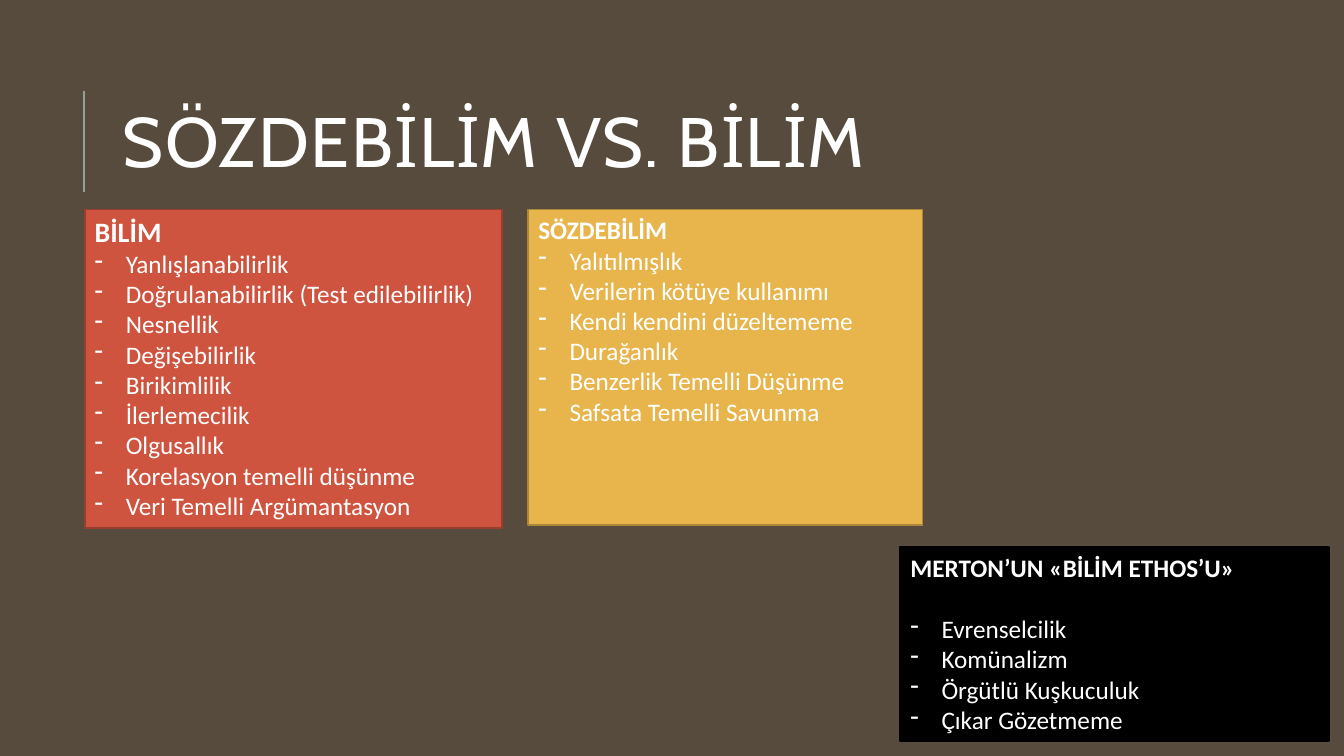
from lxml import etree
from pptx import Presentation, util as u
from pptx.dml.color import RGBColor
from pptx.enum import shapes, text
from pptx.oxml.ns import qn

BROWN = RGBColor(0x56, 0x4B, 0x3C)
SAGE = RGBColor(0x93, 0xA2, 0x99)
WHITE = RGBColor(0xFF, 0xFF, 0xFF)
BLACK = RGBColor(0x00, 0x00, 0x00)
RED = RGBColor(0xCF, 0x54, 0x3F)
RUST = RGBColor(0x99, 0x3E, 0x2F)
GOLD = RGBColor(0xE8, 0xB5, 0x4D)
OCHRE = RGBColor(0xAC, 0x86, 0x39)

SCIENCE = [
    "Yanlışlanabilirlik", "Doğrulanabilirlik (Test edilebilirlik)", "Nesnellik",
    "Değişebilirlik", "Birikimlilik", "İlerlemecilik", "Olgusallık",
    "Korelasyon temelli düşünme", "Veri Temelli Argümantasyon",
]
PSEUDO = [
    "Yalıtılmışlık", "Verilerin kötüye kullanımı", "Kendi kendini düzeltememe",
    "Durağanlık", "Benzerlik Temelli Düşünme", "Safsata Temelli Savunma",
]
ETHOS = ["Evrenselcilik", "Komünalizm", "Örgütlü Kuşkuculuk", "Çıkar Gözetmeme"]


class Board:
    title_font = "Cabin"
    body_font = "Calibri"
    size = 18
    indent = u.Inches(0.31)

    def __init__(self, deck):
        self.slide = deck.slides.add_slide(deck.slide_layouts[6])
        fill = self.slide.background.fill
        fill.solid()
        fill.fore_color.rgb = BROWN

    def style(self, para, words, size, name, bold=False):
        para.text = words
        font = para.font
        font.size, font.name, font.bold = u.Pt(size), name, bold
        font.color.rgb = WHITE

    def rule(self, x, top, end):
        x, top, end = u.Inches(x), u.Inches(top), u.Inches(end)
        line = self.slide.shapes.add_connector(
            shapes.MSO_CONNECTOR.STRAIGHT, x, end, x, top)
        line.line.color.rgb = SAGE
        line.line.width = u.Pt(1.5)
        etree.SubElement(line._element.spPr, qn("a:effectLst"))

    def title(self, words, *place):
        box = self.slide.shapes.add_textbox(*map(u.Inches, place))
        frame = box.text_frame
        frame.word_wrap = True
        frame.vertical_anchor = text.MSO_ANCHOR.MIDDLE
        para = frame.paragraphs[0]
        self.style(para, words, 50, self.title_font)
        para.line_spacing = 0.8
        para.runs[0].font._element.set("spc", "100")

    def dash(self, para):
        """Give the paragraph a hanging dash bullet."""
        props = para._p.get_or_add_pPr()
        props.set("marL", str(self.indent))
        props.set("indent", str(-self.indent))
        mark = etree.Element(qn("a:buChar"), char="-")
        props.insert(0, mark)

    def panel(self, place, fill, edge, head, items, size=18, gap=0):
        """Draw a filled box with a bold heading and a dashed list."""
        box = self.slide.shapes.add_shape(
            shapes.MSO_SHAPE.RECTANGLE, *map(u.Inches, place))
        box.shadow.inherit = False
        box.fill.solid()
        box.fill.fore_color.rgb = fill
        box.line.color.rgb = edge
        box.line.width = u.Pt(1.25)
        frame = box.text_frame
        frame.word_wrap = True
        frame.vertical_anchor = text.MSO_ANCHOR.TOP
        para = frame.paragraphs[0]
        para.alignment = text.PP_ALIGN.LEFT
        para.space_after = u.Pt(gap)
        self.style(para, head, size, self.body_font, True)
        for item in items:
            para = frame.add_paragraph()
            para.alignment = text.PP_ALIGN.LEFT
            self.style(para, item, self.size, self.body_font)
            self.dash(para)


def main():
    deck = Presentation()
    deck.slide_width, deck.slide_height = u.Inches(13.33), u.Inches(7.5)
    board = Board(deck)
    board.rule(0.83, 0.9, 1.9)
    board.title("SÖZDEBİLİM VS. BİLİM", 1.12, 0.64, 10.63, 1.64)
    board.panel((8.93, 5.43, 4.25, 1.92), BLACK, BLACK,
                "MERTON’UN «BİLİM ETHOS’U»", ETHOS, gap=22)
    board.panel((0.84, 2.08, 4.14, 3.16), RED, RUST, "BİLİM", SCIENCE, size=20)
    board.panel((5.24, 2.08, 3.91, 3.13), GOLD, OCHRE, "SÖZDEBİLİM", PSEUDO)
    deck.save("out.pptx")


if __name__ == "__main__":
    main()
